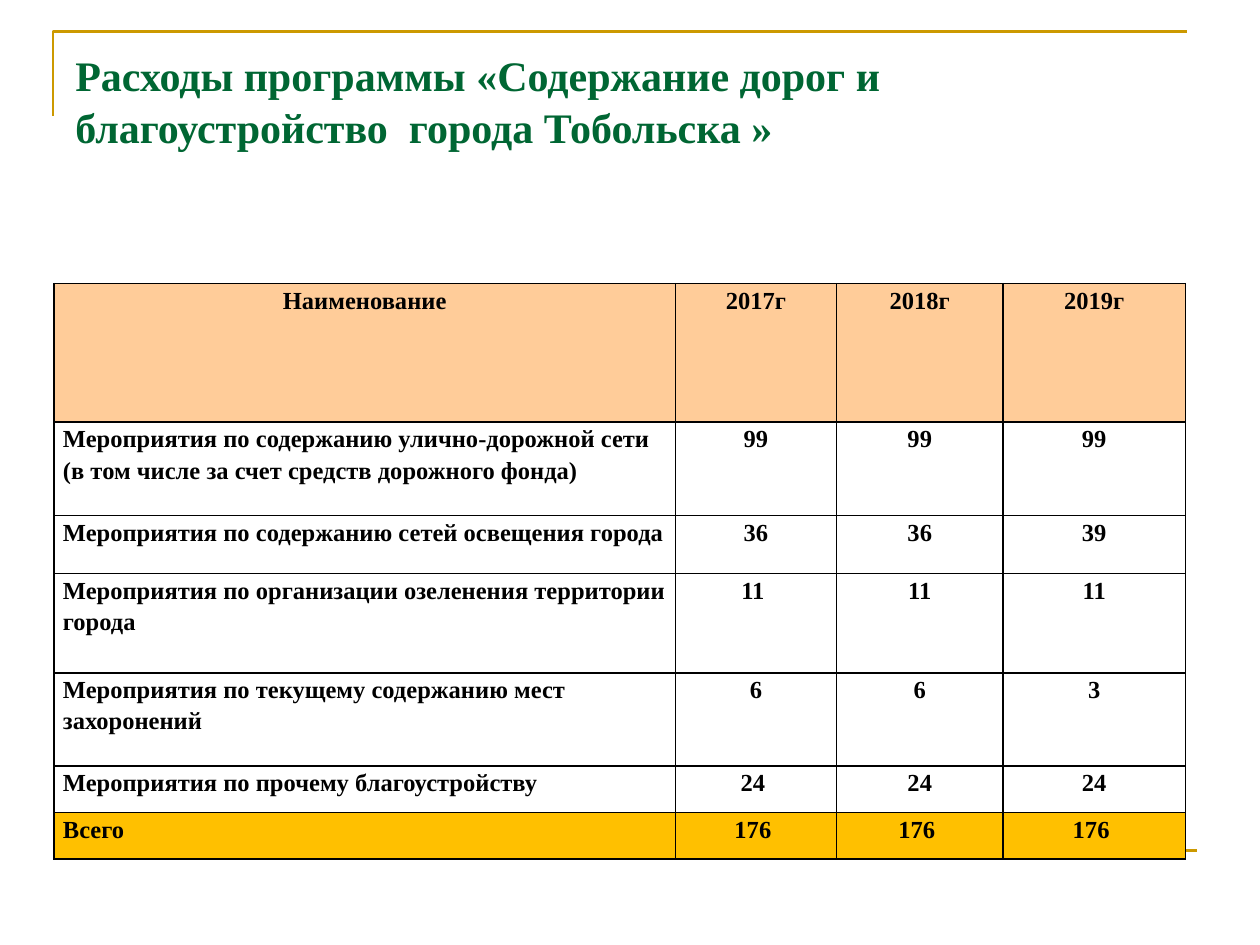
from dataclasses import dataclass

from lxml import etree
from pptx import Presentation, util as u
from pptx.dml.color import RGBColor
from pptx.enum import shapes, text
from pptx.oxml.ns import qn

# Content
TITLE = "Расходы программы «Содержание дорог и благоустройство  города Тобольска »"
HEADER = ("Наименование", "2017г", "2018г", "2019г")
EXPENSES = [
    ("Мероприятия по содержанию улично-дорожной сети "
     "(в том числе за счет средств дорожного фонда)", "99", "99", "99"),
    ("Мероприятия по содержанию сетей освещения города", "36", "36", "39"),
    ("Мероприятия по организации озеленения территории города", "11 ", "11", "11"),
    ("Мероприятия по текущему содержанию мест захоронений", "6", "6", "3"),
    ("Мероприятия по прочему благоустройству", "24 ", "24", "24"),
]
TOTAL = ("Всего", "176 ", "176 ", "176 ")

# Table layout in inches
TABLE_LEFT, TABLE_TOP = 0.43, 2.25
COLUMN_WIDTHS = (4.93, 1.28, 1.32, 1.45)
ROW_HEIGHTS = (1.1, 0.74, 0.46, 0.79, 0.74, 0.37, 0.37)


@dataclass(frozen=True)
class Theme:
    font: str = "Times New Roman"
    title_size: int = 24
    table_size: int = 14
    title: str = "006633"
    ink: str = "000000"
    rule: str = "CC9900"
    header: str = "FFCC99"
    total: str = "FFC000"


THEME = Theme()


def add_span(para, words, size, color):
    span = para.add_run()
    span.text = words
    span.font.name = THEME.font
    span.font.size = u.Pt(size)
    span.font.bold = True
    span.font.color.rgb = RGBColor.from_string(color)


def style_line(line):
    line.color.rgb = RGBColor.from_string(THEME.rule)
    line.width = u.Pt(1.5)


def add_frame(page):
    """Corner bracket at the top and rule at the bottom."""
    pen = page.shapes.build_freeform(u.Inches(0.42), u.Inches(0.92))
    pen.add_line_segments(
        [(u.Inches(0.42), u.Inches(0.25)), (u.Inches(9.42), u.Inches(0.25))],
        close=False)
    bracket = pen.convert_to_shape()
    bracket.shadow.inherit = False
    bracket.fill.background()
    style_line(bracket.line)

    rule = page.shapes.add_connector(
        shapes.MSO_CONNECTOR.STRAIGHT,
        u.Inches(0.5), u.Inches(6.75), u.Inches(9.5), u.Inches(6.75))
    style_line(rule.line)
    etree.SubElement(rule._element.spPr, qn("a:effectLst"))


def add_title(page):
    box = page.shapes.add_textbox(
        u.Inches(0.5), u.Inches(0.32), u.Inches(9), u.Inches(1.25))
    box.text_frame.word_wrap = True
    # Narrow the text area so that the title breaks after «дорог и»
    para = box.text_frame.paragraphs[0]
    para.line_spacing = 1.05
    add_span(para, TITLE, THEME.title_size, THEME.title)


def add_borders(cell):
    properties = cell._tc.get_or_add_tcPr()
    for place, side in enumerate(("lnL", "lnR", "lnT", "lnB")):
        border = etree.Element(qn(f"a:{side}"), w=str(u.Pt(1)))
        fill = etree.SubElement(border, qn("a:solidFill"))
        etree.SubElement(fill, qn("a:srgbClr"), val=THEME.ink)
        properties.insert(place, border)


def fill_cell(cell, words, centred, color):
    cell.margin_left = cell.margin_right = u.Inches(0.07)
    cell.margin_top = cell.margin_bottom = 0
    if color:
        cell.fill.solid()
        cell.fill.fore_color.rgb = RGBColor.from_string(color)
    else:
        cell.fill.background()
    para = cell.text_frame.paragraphs[0]
    para.line_spacing = 1.15
    para.alignment = text.PP_ALIGN.CENTER if centred else text.PP_ALIGN.LEFT
    add_span(para, words, THEME.table_size, THEME.ink)
    add_borders(cell)


def add_expenses(page):
    rows = [HEADER, *EXPENSES, TOTAL]
    fills = [THEME.header, *[None] * len(EXPENSES), THEME.total]
    table = page.shapes.add_table(
        len(rows), len(HEADER), u.Inches(TABLE_LEFT), u.Inches(TABLE_TOP),
        u.Inches(sum(COLUMN_WIDTHS)), u.Inches(sum(ROW_HEIGHTS))).table
    for column, width in zip(table.columns, COLUMN_WIDTHS):
        column.width = u.Inches(width)
    for row, height in zip(table.rows, ROW_HEIGHTS):
        row.height = u.Inches(height)
    for r, (row, color) in enumerate(zip(rows, fills)):
        for c, words in enumerate(row):
            fill_cell(table.cell(r, c), words, r == 0 or c > 0, color)


def main():
    deck = Presentation()
    deck.slide_width, deck.slide_height = u.Inches(10), u.Inches(7.5)
    page = deck.slides.add_slide(deck.slide_layouts[6])
    add_frame(page)
    add_title(page)
    add_expenses(page)
    deck.save("out.pptx")


if __name__ == "__main__":
    main()
